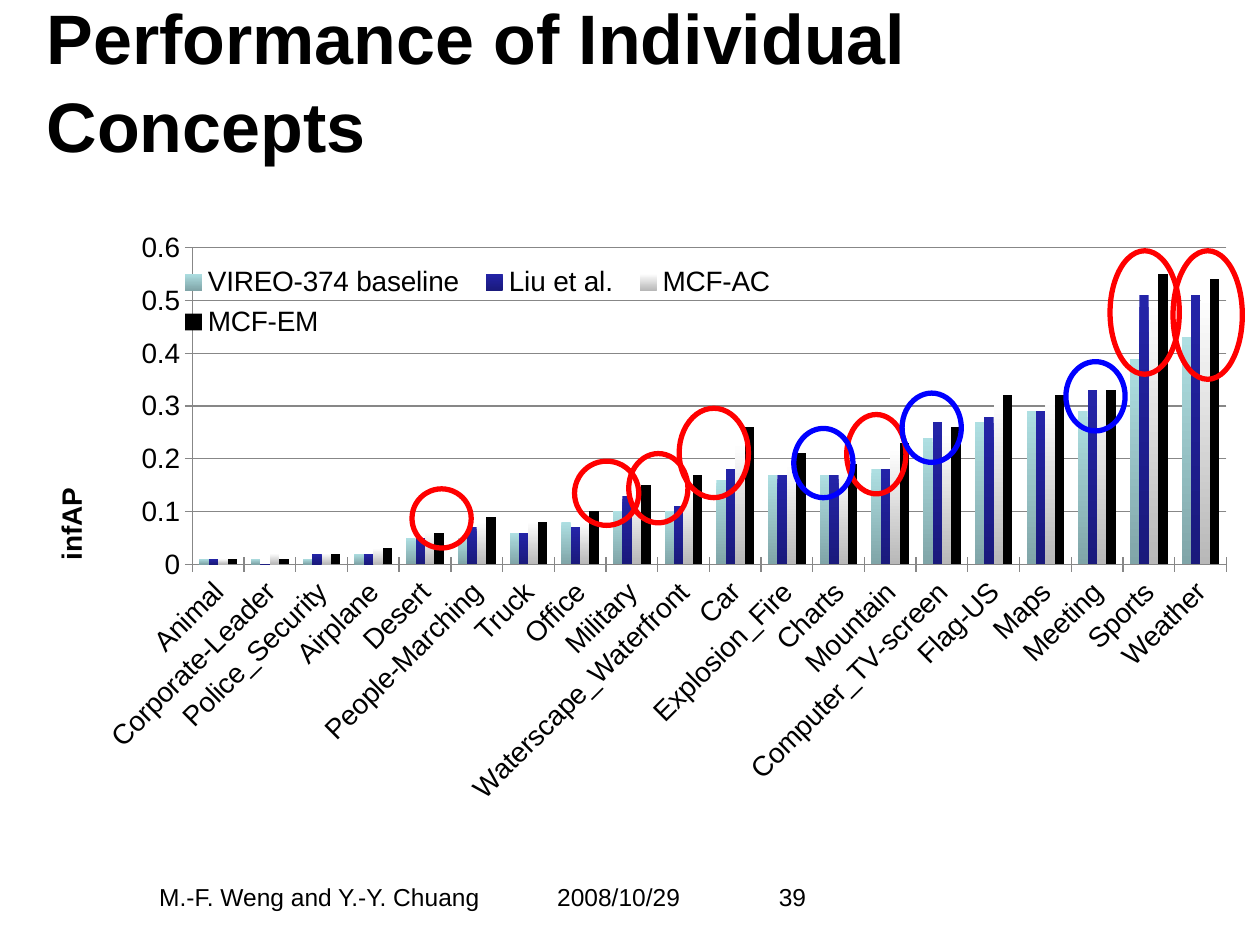
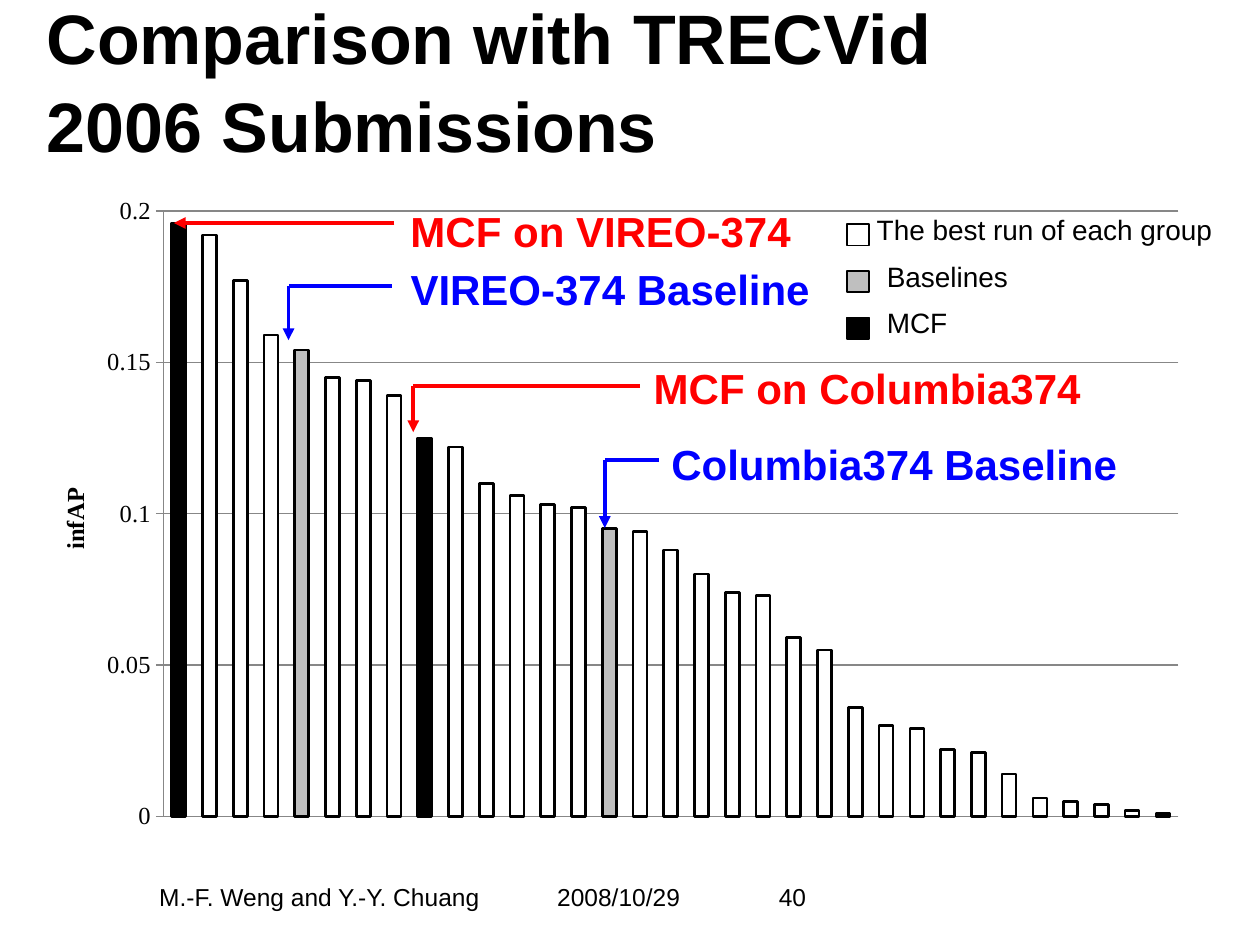
import itertools
from dataclasses import dataclass
from typing import Any

import pptx
import pptx.chart.chart
import pptx.chart.data
import pptx.dml.color
import pptx.enum.chart
import pptx.enum.shapes
import pptx.enum.text
import pptx.oxml.ns
import pptx.slide
import pptx.util
from lxml import etree
from pptx.util import Inches

# Shared look
COLORS = {
    "black": "000000", "white": "FFFFFF", "red": "FF0000", "blue": "0000FF",
    "grey": "BFBFBF", "grid": "878787",
    "aqua": "AEDFE2", "aqua_dark": "80A5A8",
    "navy": "2424A8", "navy_dark": "1A1A7C", "silver": "B8B8B8",
}
SANS = "Arial"
SERIF = "Times New Roman"
qn = pptx.oxml.ns.qn
Box = tuple[float, float, float, float]
Point = tuple[float, float]


@dataclass(frozen=True)
class Ring:
    color: str
    box: Box


@dataclass(frozen=True)
class Bars:
    name: str
    top_color: str
    bottom_color: str
    values: tuple[float, ...]


@dataclass(frozen=True)
class ChartStyle:
    box: Box
    plot: Box          # fractions of the chart area
    title_at: Point    # fractions of the chart area
    font: str
    size: int
    maximum: float
    step: float
    gap: int


@dataclass(frozen=True)
class Callout:
    text: str
    color: str
    box: Box
    route: tuple[Point, ...]   # from the label to the bar


@dataclass(frozen=True)
class Key:
    text: str
    color: str
    text_left: float


# Slide 1 data
CONCEPTS = (
    "Animal", "Corporate-Leader", "Police_Security", "Airplane", "Desert",
    "People-Marching", "Truck", "Office", "Military", "Waterscape_Waterfront",
    "Car", "Explosion_Fire", "Charts", "Mountain", "Computer_TV-screen",
    "Flag-US", "Maps", "Meeting", "Sports", "Weather",
)
METHODS = (
    Bars("VIREO-374 baseline", "aqua", "aqua_dark",
         (0.01, 0.01, 0.01, 0.02, 0.05, 0.05, 0.06, 0.08, 0.1, 0.1,
          0.16, 0.17, 0.17, 0.18, 0.24, 0.27, 0.29, 0.29, 0.39, 0.43)),
    Bars("Liu et al.", "navy", "navy_dark",
         (0.01, 0, 0.02, 0.02, 0.05, 0.07, 0.06, 0.07, 0.13, 0.11,
          0.18, 0.17, 0.17, 0.18, 0.27, 0.28, 0.29, 0.33, 0.51, 0.51)),
    Bars("MCF-AC", "white", "silver",
         (0.01, 0.02, 0.02, 0.03, 0.06, 0.08, 0.08, 0.08, 0.13, 0.14,
          0.23, 0.19, 0.18, 0.22, 0.25, 0.31, 0.32, 0.34, 0.5, 0.51)),
    Bars("MCF-EM", "black", "black",
         (0.01, 0.01, 0.02, 0.03, 0.06, 0.09, 0.08, 0.1, 0.15, 0.17,
          0.26, 0.21, 0.19, 0.23, 0.26, 0.32, 0.32, 0.33, 0.55, 0.54)),
)
CONCEPT_STYLE = ChartStyle((0.09, 1.76, 9.84, 4.72), (0.146, 0.044, 0.834, 0.532),
                           (0.03, 0.44), SANS, 16, 0.6, 0.1, 150)
RINGS = (
    Ring("red", (5.39, 3.24, 0.55, 0.71)),
    Ring("red", (3.27, 3.88, 0.47, 0.47)),
    Ring("red", (4.56, 3.66, 0.51, 0.51)),
    Ring("red", (4.99, 3.6, 0.47, 0.55)),
    Ring("red", (8.81, 1.99, 0.55, 0.98)),
    Ring("red", (9.31, 1.99, 0.55, 1.02)),
    Ring("red", (6.72, 3.29, 0.47, 0.63)),
    Ring("blue", (6.3, 3.4, 0.47, 0.55)),
    Ring("blue", (8.46, 2.87, 0.47, 0.55)),
    Ring("blue", (7.16, 3.12, 0.47, 0.55)),
)

# Slide 2 data
SUBMISSIONS = (
    0.196, 0.192, 0.177, 0.159, 0.154, 0.145, 0.144, 0.139, 0.125, 0.122, 0.11,
    0.106, 0.103, 0.102, 0.095, 0.094, 0.088, 0.08, 0.074, 0.073, 0.059, 0.055,
    0.036, 0.03, 0.029, 0.022, 0.021, 0.014, 0.006, 0.005, 0.004, 0.002, 0.001,
)
MARKED_RUNS = {0: "black", 4: "grey", 8: "black", 14: "grey"}
SUBMISSION_STYLE = ChartStyle((0.16, 1.47, 9.39, 5.23), (0.121, 0.039, 0.858, 0.919),
                              (0.029, 0.452), SERIF, 14, 0.2, 0.05, 120)
KEYS = (
    Key("The best run of each group", "white", 6.86),
    Key("Baselines", "grey", 6.94),
    Key("MCF", "black", 6.94),
)
CALLOUTS = (
    Callout("MCF on VIREO-374", "red", (3.16, 1.58, 3.33, 0.5),
            ((3.13, 1.77), (1.38, 1.77))),
    Callout("VIREO-374 Baseline", "blue", (3.16, 2.04, 3.48, 0.5),
            ((3.11, 2.27), (2.29, 2.27), (2.29, 2.7))),
    Callout("MCF on Columbia374", "red", (5.09, 2.83, 3.74, 0.5),
            ((5.08, 3.06), (3.28, 3.06), (3.28, 3.43))),
    Callout("Columbia374 Baseline", "blue", (5.23, 3.43, 3.84, 0.5),
            ((5.23, 3.65), (4.8, 3.65), (4.8, 4.19))),
)


# Drawing helpers
def rgb(name: str) -> pptx.dml.color.RGBColor:
    return pptx.dml.color.RGBColor.from_string(COLORS[name])


def inches(box: tuple[float, ...]) -> list[int]:
    return [Inches(length) for length in box]


def format_font(font: Any, size: float, color: str = "black", bold: bool = False,
                name: str = SANS) -> None:
    font.name, font.size, font.bold = name, pptx.util.Pt(size), bold
    font.color.rgb = rgb(color)


def write(frame: Any, text: str, *, size: float, color: str = "black",
          bold: bool = False, name: str = SANS, align: str = "LEFT",
          anchor: str = "TOP", spacing: float = 1.0) -> None:
    frame.word_wrap = True
    frame.auto_size = pptx.enum.text.MSO_AUTO_SIZE.NONE
    frame.vertical_anchor = pptx.enum.text.MSO_ANCHOR[anchor]
    paragraph = frame.paragraphs[0]
    paragraph.alignment = pptx.enum.text.PP_ALIGN[align]
    paragraph.line_spacing = spacing
    run = paragraph.add_run()
    run.text = text
    format_font(run.font, size, color, bold, name)


def add_text(slide: pptx.slide.Slide, box: Box, text: str, **style: Any) -> None:
    write(slide.shapes.add_textbox(*inches(box)).text_frame, text, **style)


def add_preset(slide: pptx.slide.Slide, kind: str, box: Box, line: str,
               width: float, fill: str | None = None) -> None:
    shape = slide.shapes.add_shape(pptx.enum.shapes.MSO_SHAPE[kind], *inches(box))
    shape.shadow.inherit = False
    if fill:
        shape.fill.solid()
        shape.fill.fore_color.rgb = rgb(fill)
    else:
        shape.fill.background()
    shape.line.color.rgb = rgb(line)
    shape.line.width = pptx.util.Pt(width)


def add_line(slide: pptx.slide.Slide, start: Point, end: Point, color: str,
             arrow: bool) -> None:
    connector = slide.shapes.add_connector(
        pptx.enum.shapes.MSO_CONNECTOR.STRAIGHT, *inches(start + end))
    connector.line.color.rgb = rgb(color)
    connector.line.width = pptx.util.Pt(2.25)
    properties = connector.element.find(qn("p:spPr"))
    if arrow:
        etree.SubElement(properties.find(qn("a:ln")), qn("a:tailEnd"), type="triangle")
    etree.SubElement(properties, qn("a:effectLst"))


def place(part: Any, index: int, position: tuple[float, ...], inner: bool = False) -> None:
    """Give a chart part a manual layout, in fractions of the chart area."""
    for old in part.findall(qn("c:layout")):
        part.remove(old)
    layout = etree.Element(qn("c:layout"))
    manual = etree.SubElement(layout, qn("c:manualLayout"))
    if inner:
        etree.SubElement(manual, qn("c:layoutTarget"), val="inner")
    for side in ("xMode", "yMode"):
        etree.SubElement(manual, qn(f"c:{side}"), val="edge")
    for side, value in zip("xywh", position):
        etree.SubElement(manual, qn(f"c:{side}"), val=str(value))
    part.insert(index, layout)


def add_columns(slide: pptx.slide.Slide, style: ChartStyle, categories: Any,
                series: dict[str, tuple[float, ...]]) -> pptx.chart.chart.Chart:
    data = pptx.chart.data.CategoryChartData()
    data.categories = categories
    for name, values in series.items():
        data.add_series(name, values)
    chart = slide.shapes.add_chart(pptx.enum.chart.XL_CHART_TYPE.COLUMN_CLUSTERED,
                                   *inches(style.box), data).chart
    chart.has_title = chart.has_legend = False
    format_font(chart.font, style.size, name=style.font)
    plot = chart.plots[0]
    plot.vary_by_categories = False
    plot.gap_width, plot.overlap = style.gap, 0

    axis = chart.value_axis
    axis.minimum_scale, axis.maximum_scale = 0, style.maximum
    axis.major_unit = style.step
    axis.has_major_gridlines = True
    for line in (axis.format.line, axis.major_gridlines.format.line,
                 chart.category_axis.format.line):
        line.color.rgb = rgb("grid")
        line.width = pptx.util.Pt(0.75)
    axis.major_tick_mark = pptx.enum.chart.XL_TICK_MARK.CROSS
    format_font(axis.tick_labels.font, style.size, name=style.font)
    run = axis.axis_title.text_frame.paragraphs[0].add_run()
    run.text = "infAP"
    format_font(run.font, style.size, bold=True, name=style.font)
    place(axis.axis_title.element, 1, style.title_at)
    place(chart.element.find(".//" + qn("c:plotArea")), 0, style.plot, inner=True)
    return chart


def add_slide(presentation: Any, title: str, number: int) -> pptx.slide.Slide:
    slide = presentation.slides.add_slide(presentation.slide_layouts.get_by_name("Title Only"))
    shape = slide.shapes.title
    shape.left, shape.top, shape.width, shape.height = inches((0.27, 0, 8.11, 1.25))
    write(shape.text_frame, title, size=40, bold=True, anchor="MIDDLE", spacing=1.05)
    for left, width, text in ((0.95, 3.17, "M.-F. Weng and Y.-Y. Chuang"),
                              (4.32, 1.18, "2008/10/29"), (5.7, 1.18, str(number))):
        add_text(slide, (left, 6.88, width, 0.47), text, size=14,
                 align="CENTER", anchor="MIDDLE")
    return slide


# Slides
def build_concepts(presentation: Any) -> None:
    slide = add_slide(presentation, "Performance of Individual Concepts", 39)
    chart = add_columns(slide, CONCEPT_STYLE, CONCEPTS,
                        {method.name: method.values for method in METHODS})
    for series, method in zip(chart.plots[0].series, METHODS):
        fill = series.format.fill
        if method.top_color == method.bottom_color:
            fill.solid()
            fill.fore_color.rgb = rgb(method.top_color)
        else:
            fill.gradient()
            fill.gradient_angle = 270
            for stop, color in zip(fill.gradient_stops,
                                   (method.top_color, method.bottom_color)):
                stop.color.rgb = rgb(color)

    axis = chart.category_axis
    axis.major_tick_mark = pptx.enum.chart.XL_TICK_MARK.CROSS
    format_font(axis.tick_labels.font, CONCEPT_STYLE.size)
    body = axis.tick_labels.font and chart.element.xpath(".//c:catAx/c:txPr/a:bodyPr")[0]
    body.set("rot", "-2700000")
    chart.has_legend = True
    chart.legend.position = pptx.enum.chart.XL_LEGEND_POSITION.RIGHT
    chart.legend.include_in_layout = True
    format_font(chart.legend.font, CONCEPT_STYLE.size)
    place(chart.element.find(".//" + qn("c:legend")), 1, (0.126, 0.06, 0.5, 0.15))

    for ring in RINGS:
        add_preset(slide, "OVAL", ring.box, ring.color, 3)


def build_submissions(presentation: Any) -> None:
    slide = add_slide(presentation, "Comparison with TRECVid 2006 Submissions", 40)
    ranks = [str(rank) for rank in range(1, len(SUBMISSIONS) + 1)]
    chart = add_columns(slide, SUBMISSION_STYLE, ranks, {"Series 1": SUBMISSIONS})
    chart.category_axis.visible = False
    series = chart.plots[0].series[0]
    formats = [(series.format, "white")]
    formats += [(series.points[index].format, color) for index, color in MARKED_RUNS.items()]
    for bar, color in formats:
        bar.fill.solid()
        bar.fill.fore_color.rgb = rgb(color)
        bar.line.color.rgb = rgb("black")
        bar.line.width = pptx.util.Pt(1.5)

    for row, key in enumerate(KEYS):
        drop = 0.37 * row
        add_preset(slide, "RECTANGLE", (6.72, 1.78 + drop, 0.18, 0.17), "black", 1, key.color)
        add_text(slide, (key.text_left, 1.64 + drop, 2.91, 0.37), key.text, size=16)

    for callout in CALLOUTS:
        add_text(slide, callout.box, callout.text, size=24, color=callout.color, bold=True)
        for start, end in itertools.pairwise(callout.route):
            add_line(slide, start, end, callout.color, arrow=end == callout.route[-1])


def main() -> None:
    presentation = pptx.Presentation()
    presentation.slide_width, presentation.slide_height = Inches(10), Inches(7.5)
    build_concepts(presentation)
    build_submissions(presentation)
    presentation.save("out.pptx")


if __name__ == "__main__":
    main()
